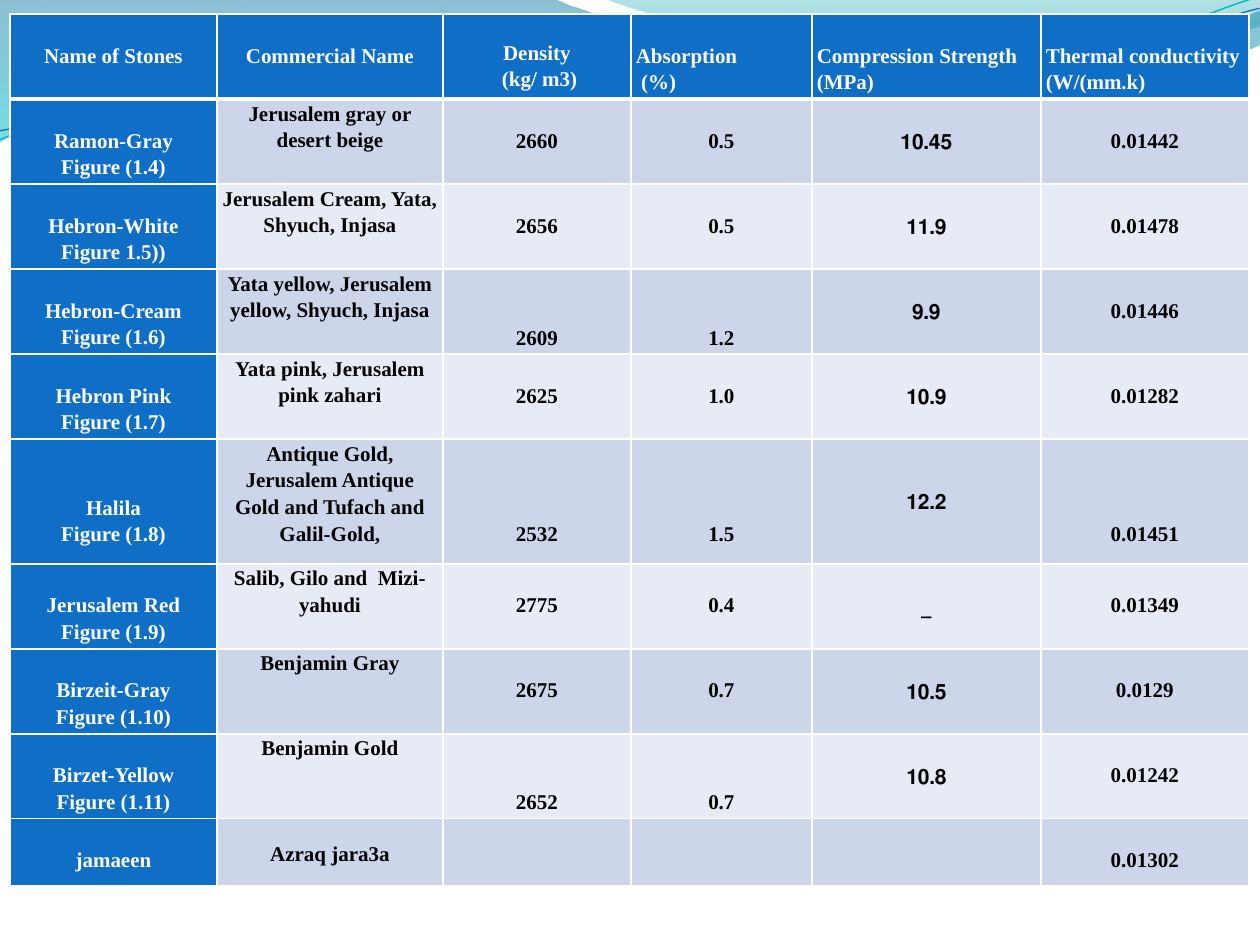
import copy
from dataclasses import dataclass

import lxml.etree
import pptx
import pptx.dml.color
import pptx.enum.text
import pptx.oxml
import pptx.oxml.ns
import pptx.util

PX = 914400 / 126
LINE = 27
FONT = "Times New Roman"
BLUE, WHITE, BLACK = "0F6FC6", "FFFFFF", "000000"
BANDS = ("CCD5EA", "E7EBF5")
WIDTHS = (207, 226, 188, 181, 229, 208)
HEADER_HEIGHT = 85
ALIGN = pptx.enum.text.PP_ALIGN
ANCHOR = pptx.enum.text.MSO_ANCHOR


@dataclass
class Stone:
    """One table row; drops count the text lines left free above a value."""

    name: str
    trade: str
    density: str
    absorption: str
    strength: str
    conductivity: str
    name_drop: int = 1
    middle_drop: int = 1
    last_drop: int = 1
    height: int = 85


@dataclass
class Curve:
    """A path of straight (2 numbers) and cubic (6 numbers) steps in px."""

    start: tuple
    steps: tuple
    stops: tuple = ()
    line: str = ""
    weight: float = 0
    rotation: float = 0


HEADERS = (
    "Name of Stones",
    "Commercial Name",
    "Density\n (kg/ m3)",
    "Absorption\n (%)",
    "Compression Strength \n(MPa)",
    "Thermal conductivity\n(W/(mm.k)",
)

STONES = (
    Stone("Ramon-Gray\nFigure (1.4)", "Jerusalem gray or desert beige",
          "2660", "0.5", "10.45", "0.01442"),
    Stone("Hebron-White\nFigure 1.5))", "Jerusalem Cream, Yata, Shyuch, Injasa",
          "2656", "0.5", "11.9", "0.01478"),
    Stone("Hebron-Cream\nFigure (1.6)", "Yata yellow, Jerusalem yellow, Shyuch, Injasa",
          "2609", "1.2", "9.9", "0.01446", middle_drop=2),
    Stone("Hebron Pink\nFigure (1.7)", "Yata pink, Jerusalem pink zahari",
          "2625", "1.0", "10.9", "0.01282"),
    Stone("Halila\nFigure (1.8)",
          "Antique Gold, Jerusalem Antique Gold and Tufach and Galil-Gold,",
          "2532", "1.5", "12.2", "0.01451", 2, 3, 3, height=125),
    Stone("Jerusalem Red\nFigure (1.9)", "Salib, Gilo and  Mizi-yahudi",
          "2775", "0.4", "_", "0.01349"),
    Stone("Birzeit-Gray\nFigure (1.10)", "Benjamin Gray",
          "2675", "0.7", "10.5", "0.0129"),
    Stone("Birzet-Yellow\nFigure (1.11)", "Benjamin Gold",
          "2652", "0.7", "10.8", "0.01242", middle_drop=2),
    Stone("jamaeen", "Azraq jara3a", "", "", "", "0.01302", height=67),
)

WAVES = (
    Curve((0, 0),
          ((554, -1), (600, 21, 837, 79, 955, 79), (1074, 79, 1207, 33, 1260, 11),
           (1261, 45), (1239, 55, 1096, 96, 940, 95), (784, 95, 481, 35, 324, 43),
           (163, 45, 58, 105, -1, 142), (0, 0)),
          stops=((0, "0074A1", 45), (100, "00C6CF", 55))),
    Curve((604, -1),
          ((641, 14, 859, 78, 969, 82), (1079, 87, 1211, 40, 1260, 26), (1260, 0), (604, -1)),
          stops=((0, "00A1A9", 30), (80, "008BBF", 45))),
    Curve((-3, 110),
          ((59, 90, 199, 52, 350, 53), (499, 53, 745, 118, 896, 114),
           (1049, 110, 1184, 45, 1260, 27)),
          line="0AB8BF", weight=0.85, rotation=-2.7),
    Curve((-2, 101),
          ((57, 94, 207, 57, 357, 58), (509, 58, 750, 112, 902, 108),
           (1052, 104, 1188, 52, 1262, 38)),
          line=BLUE, weight=0.75, rotation=-2.7),
)


def px(n: float) -> int:
    """Turn px into EMU."""
    return round(n * PX)


def rgb(value: str) -> pptx.dml.color.RGBColor:
    """Turn a hex string into a colour."""
    return pptx.dml.color.RGBColor.from_string(value)


def element(xml: str) -> lxml.etree._Element:
    """Parse one drawing element."""
    return pptx.oxml.parse_xml(xml.replace(" ", f" {pptx.oxml.ns.nsdecls('a')} ", 1))


def bend(geometry: lxml.etree._Element, curve: Curve) -> None:
    """Join the three straight pieces of each cubic step into one curve."""
    pieces = iter(list(geometry.iter(pptx.oxml.ns.qn("a:lnTo"))))
    for step in curve.steps:
        first, *others = [next(pieces) for _ in range(len(step) // 2)]
        if others:
            first.tag = pptx.oxml.ns.qn("a:cubicBezTo")
            for piece in others:
                first.append(piece[0])
                piece.getparent().remove(piece)


def draw_curve(s: pptx.slide.Slide, curve: Curve) -> None:
    """Draw a translucent wave or a thin line."""
    builder = s.shapes.build_freeform(*curve.start, scale=PX)
    points = [step[i:i + 2] for step in curve.steps for i in range(0, len(step), 2)]
    builder.add_line_segments(points, close=bool(curve.stops))
    sp = builder.convert_to_shape()
    sp.shadow.inherit = False
    sp.rotation = curve.rotation
    geometry = sp._element.spPr.find(pptx.oxml.ns.qn("a:custGeom"))
    bend(geometry, curve)
    if curve.line:
        sp.fill.background()
        sp.line.color.rgb = rgb(curve.line)
        sp.line.width = pptx.util.Pt(curve.weight)
        return
    sp.line.fill.background()
    stops = "".join(
        f'<a:gs pos="{pos * 1000}"><a:srgbClr val="{color}"><a:alpha val="{alpha * 1000}"/>'
        "</a:srgbClr></a:gs>" for pos, color, alpha in curve.stops)
    geometry.addnext(element(f'<a:gradFill rotWithShape="1"><a:gsLst>{stops}</a:gsLst>'
                             '<a:lin ang="5400000" scaled="0"/></a:gradFill>'))


def write(tf, text: str, *, color: str = BLACK, align=ALIGN.CENTER, rtl: bool = False) -> None:
    """Write one paragraph, breaking lines at each newline."""
    p = tf.paragraphs[0]
    p.alignment, p.line_spacing = align, 1.15
    if rtl:
        p._p.get_or_add_pPr().set("rtl", "1")
    p.text = text.replace("\n", "\v")
    for r in p.runs:
        r.font.size, r.font.bold, r.font.name = pptx.util.Pt(12), True, FONT
        r.font.color.rgb = rgb(color)
    for br in p._p.findall(pptx.oxml.ns.qn("a:br")):
        br.append(copy.deepcopy(p.runs[0]._r.rPr))


def fill_cell(cell, text: str, fill: str, *, drop: int = 0, top: int = 1, bottom: int = 1,
              anchor=ANCHOR.TOP, **style) -> None:
    """Fill, border and write one cell; drop is the free px above its text."""
    cell.margin_left = cell.margin_right = px(5)
    cell.margin_top, cell.margin_bottom = px(drop), 0
    cell.vertical_anchor = anchor
    cell.fill.solid()
    cell.fill.fore_color.rgb = rgb(fill)
    for i, (side, points) in enumerate(zip("LRTB", (1, 1, top, bottom))):
        cell._tc.tcPr.insert(i, element(
            f'<a:ln{side} w="{points * 12700}"><a:solidFill><a:srgbClr val="{WHITE}"/>'
            f"</a:solidFill></a:ln{side}>"))
    if text:
        write(cell.text_frame, text, **style)


def draw_table(s: pptx.slide.Slide) -> None:
    """Draw the table of stone properties."""
    heights = [HEADER_HEIGHT] + [stone.height for stone in STONES]
    table = s.shapes.add_table(len(heights), len(WIDTHS), px(10), px(14),
                               px(sum(WIDTHS)), px(sum(heights))).table
    for column, width in zip(table.columns, WIDTHS):
        column.width = px(width)
    for row, height in zip(table.rows, heights):
        row.height = px(height)
    for c, text in enumerate(HEADERS):
        rtl = c == 2
        fill_cell(table.cell(0, c), text, BLUE, drop=24 if rtl else LINE, bottom=3, rtl=rtl,
                  color=WHITE, align=ALIGN.CENTER if c < 3 else ALIGN.LEFT)
    centred = {"anchor": ANCHOR.MIDDLE, "rtl": True}
    for i, stone in enumerate(STONES):
        middle = {"drop": stone.middle_drop * LINE}
        values = (
            (stone.name, {"drop": stone.name_drop * LINE, "color": WHITE}),
            (stone.trade, centred if stone is STONES[-1] else {}),
            (stone.density, middle),
            (stone.absorption, middle),
            (stone.strength, centred),
            (stone.conductivity, {"drop": stone.last_drop * LINE}),
        )
        for c, (text, style) in enumerate(values):
            fill_cell(table.cell(i + 1, c), text, BANDS[i % 2] if c else BLUE,
                      top=1 if i else 3, **style)


def main() -> None:
    """Build the slide and save it."""
    prs = pptx.Presentation()
    prs.slide_width, prs.slide_height = px(1260), px(945)
    s = prs.slides.add_slide(prs.slide_layouts[6])
    for curve in WAVES:
        draw_curve(s, curve)
    draw_table(s)
    prs.save("out.pptx")


if __name__ == "__main__":
    main()
